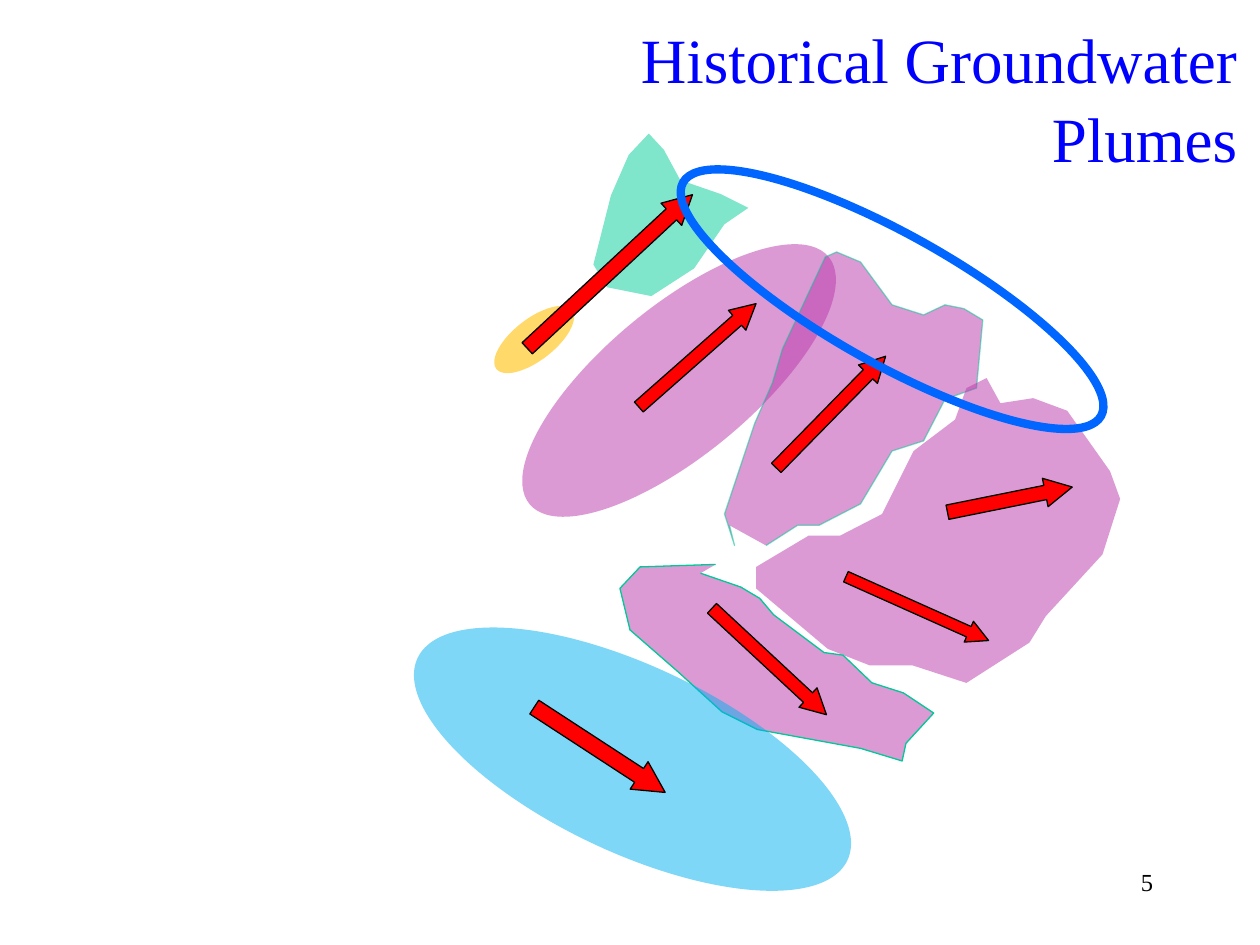
from dataclasses import dataclass
from typing import Optional

from lxml.etree import SubElement
from pptx import Presentation
from pptx.dml.color import RGBColor
from pptx.enum.shapes import MSO_SHAPE as Kind
from pptx.enum.text import MSO_ANCHOR as Anchor, MSO_AUTO_SIZE as Fit, PP_ALIGN as Align
from pptx.oxml.ns import qn
from pptx.util import Inches, Pt

PURPLE, GREEN, RED, BLACK = "B937AA", "00C896", "FF0000", "000000"


@dataclass
class Paint:
    fill: Optional[str] = None
    alpha: int = 50
    line: Optional[str] = None
    width: float = 0.75
    fade: int = 100  # opacity of the line, in percent


@dataclass
class Oval:
    box: tuple
    turn: float
    paint: Paint


@dataclass
class Patch:
    points: list
    paint: Paint
    closed: bool = True


@dataclass
class Arrow:
    left: float
    top: float
    turn: float
    width: float = 0.21
    length: float = 1.24


# Plumes, from back to front
PLUMES = [
    Patch([(5.15, 1.06), (4.99, 1.23), (4.85, 1.55), (4.71, 2.1), (4.82, 2.28),
           (5.17, 2.35), (5.51, 2.13), (5.75, 1.78), (5.94, 1.65), (5.72, 1.54),
           (5.4, 1.43), (5.27, 1.19)],
          Paint("00CC99")),
    Oval((3.85, 2.43, 3.08, 1.18), 320.4, Paint(PURPLE)),
    Patch([(5.79, 4.17), (5.83, 4.33), (5.75, 4.08), (5.99, 3.36), (6.13, 3.04),
           (6.21, 2.77), (6.55, 2.04), (6.64, 2), (6.83, 2.08), (7.08, 2.42),
           (7.33, 2.5), (7.5, 2.42), (7.65, 2.45), (7.8, 2.54), (7.75, 3.08),
           (7.5, 3.17), (7.33, 3.5), (7.08, 3.58), (6.83, 4), (6.5, 4.17),
           (6.33, 4.17), (6.08, 4.33)],
          Paint(PURPLE, line=GREEN, fade=49), closed=False),
    Patch([(7.83, 3), (7.67, 3.08), (7.58, 3.33), (7.25, 3.58), (7, 4.08),
           (6.67, 4.25), (6.42, 4.25), (6, 4.5), (6, 4.67), (6.57, 5.15),
           (6.9, 5.28), (7.24, 5.28), (7.67, 5.42), (8.17, 5.1), (8.3, 4.89),
           (8.75, 4.4), (8.89, 3.96), (8.81, 3.74), (8.47, 3.26), (8.2, 3.16),
           (7.94, 3.2)],
          Paint(PURPLE)),
    Patch([(5.68, 4.48), (5.08, 4.5), (4.92, 4.67), (5, 5), (5.39, 5.34),
           (5.73, 5.65), (6.01, 5.79), (6.83, 5.94), (7.16, 6.04), (7.19, 5.9),
           (7.41, 5.66), (7.17, 5.5), (6.92, 5.42), (6.69, 5.2), (6.54, 5.18),
           (6.14, 4.88), (6.03, 4.75), (5.88, 4.66), (5.56, 4.55)],
          Paint(PURPLE, line=GREEN), closed=False),
    Oval((4.28, 4.14, 1.48, 3.77), 295.2, Paint("00B0F0")),
    Oval((3.86, 2.53, 0.76, 0.33), 322.2, Paint("FFC000", 59)),
]

# Flow arrows
FLOWS = [
    Arrow(4.72, 1.26, 227.1, 0.24, 1.79),
    Arrow(5.43, 2.2, 228.6),
    Arrow(6.49, 2.65, 224.4),
    Arrow(4.63, 5.33, 303.1, 0.26),
    Arrow(6, 4.63, 312.9),
    Arrow(7.9, 3.46, 258.6, 0.23, 1.01),
    Arrow(7.19, 4.21, 294.1, 0.18),
]

RING = Oval((5.18, 1.86, 3.8, 1.03), 29.2, Paint(line="0066FF", width=4.75))


def tint(fill, code: str, alpha: int = 100) -> None:
    """Set a solid colour, see-through when alpha is below 100."""
    fill.solid()
    fill.fore_color.rgb = RGBColor.from_string(code)
    if alpha < 100:
        tone = fill._xPr.find(qn("a:solidFill"))[0]
        SubElement(tone, qn("a:alpha"), val=str(alpha * 1000))


def coat(shape, paint: Paint) -> None:
    shape.shadow.inherit = False
    if paint.fill:
        tint(shape.fill, paint.fill, paint.alpha)
    else:
        shape.fill.background()
    if paint.line:
        tint(shape.line.fill, paint.line, paint.fade)
        shape.line.width = Pt(paint.width)
    else:
        shape.line.fill.background()


def put_shape(slide, kind: Kind, box: tuple, turn: float, paint: Paint):
    shape = slide.shapes.add_shape(kind, *map(Inches, box))
    shape.rotation = turn
    coat(shape, paint)
    return shape


def put_oval(slide, oval: Oval) -> None:
    put_shape(slide, Kind.OVAL, oval.box, oval.turn, oval.paint)


def put_patch(slide, patch: Patch) -> None:
    first, *rest = [(Inches(x), Inches(y)) for x, y in patch.points]
    pen = slide.shapes.build_freeform(*first)
    pen.add_line_segments(rest, close=patch.closed)
    coat(pen.convert_to_shape(), patch.paint)


def put_arrow(slide, arrow: Arrow) -> None:
    box = (arrow.left, arrow.top, arrow.width, arrow.length)
    shape = put_shape(slide, Kind.DOWN_ARROW, box, arrow.turn,
                      Paint(RED, 100, BLACK))
    shape.adjustments[1] = 0.95


def put_text(shape, box: tuple, text: str, size: float, code: str,
             space: float = 1.0) -> None:
    sides = zip(("left", "top", "width", "height"), map(Inches, box))
    frame = shape.text_frame
    frame.text = text
    para = frame.paragraphs[0]
    font = para.runs[0].font
    formats = [
        (shape, dict(sides)),
        (frame, {"word_wrap": True, "auto_size": Fit.NONE,
                 "vertical_anchor": Anchor.TOP}),
        (para, {"alignment": Align.RIGHT, "line_spacing": space}),
        (font, {"name": "Times New Roman", "size": Pt(size)}),
    ]
    for item, values in formats:
        for name, value in values.items():
            setattr(item, name, value)
    tint(font.fill, code)


def main() -> None:
    deck = Presentation()
    deck.slide_width, deck.slide_height = Inches(10), Inches(7.5)
    slide = deck.slides.add_slide(deck.slide_layouts[5])

    # Title and page number
    put_text(slide.shapes.title, (4.75, 0.08, 5.17, 1.3),
             "Historical Groundwater Plumes", 36, "0000FF", 1.05)
    page = slide.shapes.add_textbox(0, 0, 0, 0)
    put_text(page, (7.17, 6.83, 2.08, 0.5), "5", 14, BLACK)

    # Plumes, arrows and the ring on top
    for plume in PLUMES:
        draw = put_oval if isinstance(plume, Oval) else put_patch
        draw(slide, plume)
    for flow in FLOWS:
        put_arrow(slide, flow)
    put_oval(slide, RING)

    deck.save("out.pptx")


if __name__ == "__main__":
    main()
